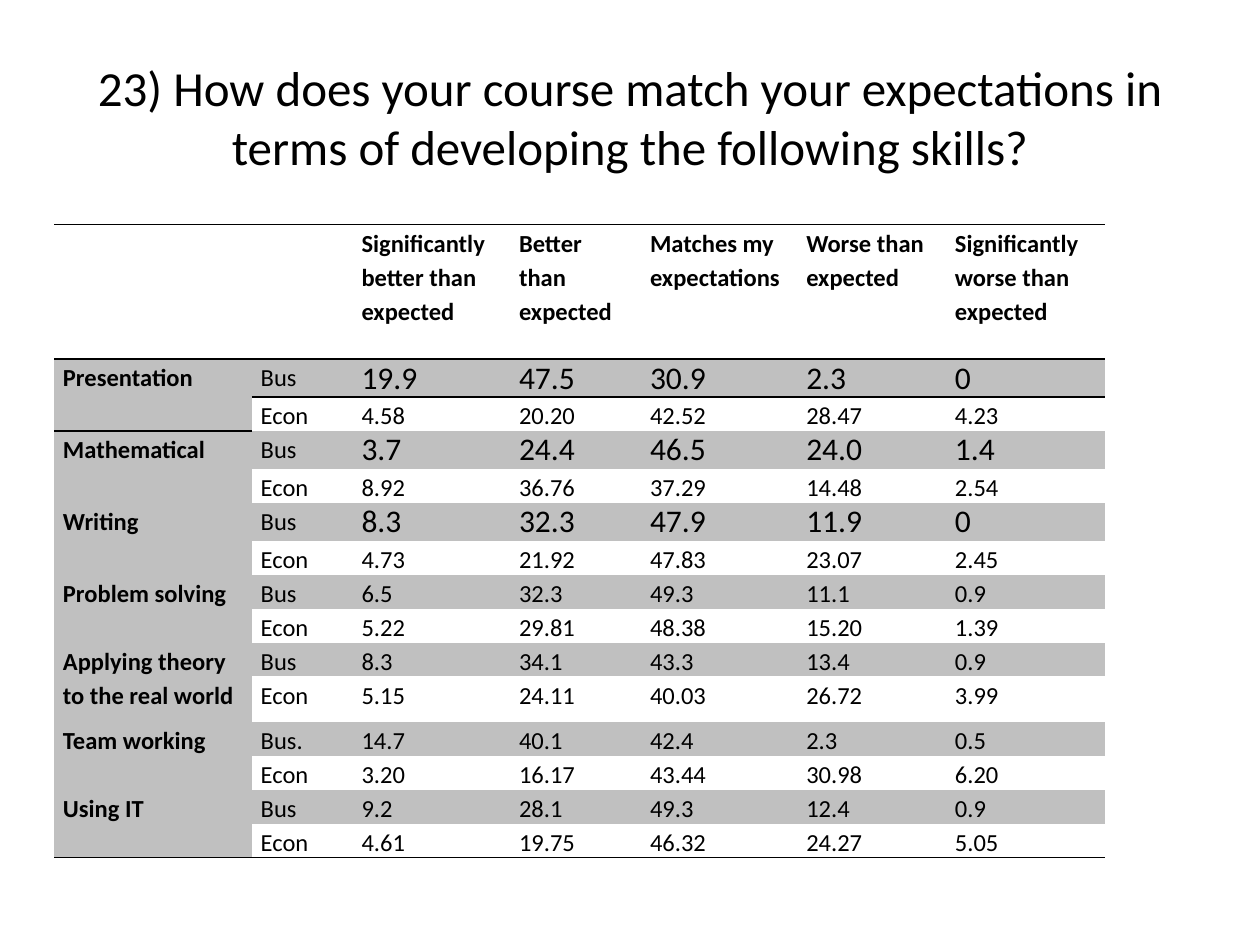
from dataclasses import dataclass

from lxml.etree import SubElement
from pptx import Presentation
from pptx.dml.color import RGBColor
from pptx.enum.text import MSO_ANCHOR, PP_ALIGN
from pptx.oxml.ns import qn
from pptx.util import Inches, Pt


@dataclass(frozen=True)
class Theme:
    font: str = "Calibri"
    ink: str = "000000"
    band: str = "C0C0C0"
    title: int = 28
    large: int = 18
    body: int = 14
    spacing: float = 1.15
    rule: int = 1
    plain_style: str = "{2D5ABB26-0587-4C30-8999-92F81FD0307C}"


THEME = Theme()
WIDTH, HEIGHT = 10, 7.5
COLUMNS = [1.57, 0.8, 1.25, 1.04, 1.24, 1.18, 1.26]
HEADER_HEIGHT, ROW_HEIGHT, TALL_HEIGHT = 1.07, 0.27, 0.36
TITLE = "23) How does your course match your expectations in terms of developing the following skills?"
HEADINGS = ["", "", "Significantly better than expected", "Better than expected",
            "Matches my expectations", "Worse than expected", "Significantly worse than expected"]
LARGE_SKILLS = {"Presentation", "Mathematical", "Writing"}
TALL_SKILL = "Applying theory to the real world"
SKILLS = [
    ("Presentation", "Bus", "19.9 47.5 30.9 2.3 0", "4.58 20.20 42.52 28.47 4.23"),
    ("Mathematical", "Bus", "3.7 24.4 46.5 24.0 1.4", "8.92 36.76 37.29 14.48 2.54"),
    ("Writing", "Bus", "8.3 32.3 47.9 11.9 0", "4.73 21.92 47.83 23.07 2.45"),
    ("Problem solving", "Bus", "6.5 32.3 49.3 11.1 0.9", "5.22 29.81 48.38 15.20 1.39"),
    (TALL_SKILL, "Bus", "8.3 34.1 43.3 13.4 0.9", "5.15 24.11 40.03 26.72 3.99"),
    ("Team working", "Bus.", "14.7 40.1 42.4 2.3 0.5", "3.20 16.17 43.44 30.98 6.20"),
    ("Using IT", "Bus", "9.2 28.1 49.3 12.4 0.9", "4.61 19.75 46.32 24.27 5.05"),
]


def add_span(para, text, size, bold=False):
    span = para.add_run()
    span.text = text
    span.font.name = THEME.font
    span.font.size = Pt(size)
    span.font.bold = bold
    span.font.color.rgb = RGBColor.from_string(THEME.ink)


def add_title(page):
    box = page.shapes.add_textbox(Inches(WIDTH * 0.05), Inches(HEIGHT * 0.04),
                                  Inches(WIDTH * 0.9), Inches(HEIGHT / 6))
    frame = box.text_frame
    frame.word_wrap = True
    frame.vertical_anchor = MSO_ANCHOR.MIDDLE
    para = frame.paragraphs[0]
    para.alignment = PP_ALIGN.CENTER
    add_span(para, TITLE, THEME.title)


def add_rule(cell, edge):
    properties = cell._tc.get_or_add_tcPr()
    line = SubElement(properties, qn(f"a:{edge}"), w=str(Pt(THEME.rule)))
    fill = SubElement(line, qn("a:solidFill"))
    SubElement(fill, qn("a:srgbClr"), val=THEME.ink)


def fill_cell(cell, text, size=THEME.body, bold=False, banded=False, edges=()):
    cell.margin_left = cell.margin_right = Inches(0.07)
    cell.margin_top = cell.margin_bottom = 0
    for edge in edges:
        add_rule(cell, edge)
    if banded:
        cell.fill.solid()
        cell.fill.fore_color.rgb = RGBColor.from_string(THEME.band)
    else:
        cell.fill.background()
    para = cell.text_frame.paragraphs[0]
    if text:
        if size == THEME.body:
            para.line_spacing = THEME.spacing
        add_span(para, text, size, bold)
    else:
        SubElement(para._p, qn("a:endParaRPr"), sz=str(size * 100))


def add_plain_table(page, heights):
    frame = page.shapes.add_table(len(heights), len(COLUMNS), Inches(0.43), Inches(1.78),
                                  Inches(sum(COLUMNS)), Inches(sum(heights)))
    table = frame.table
    table.first_row = table.horz_banding = False
    table._tbl.tblPr.find(qn("a:tableStyleId")).text = THEME.plain_style
    for column, width in zip(table.columns, COLUMNS):
        column.width = Inches(width)
    for row, height in zip(table.rows, heights):
        row.height = Inches(height)
    return table


def add_skills_table(page):
    heights = [HEADER_HEIGHT]
    for skill, *_ in SKILLS:
        heights += [ROW_HEIGHT, TALL_HEIGHT if skill == TALL_SKILL else ROW_HEIGHT]
    table = add_plain_table(page, heights)

    for column, heading in enumerate(HEADINGS):
        fill_cell(table.cell(0, column), heading, bold=True, edges=("lnT", "lnB"))

    last = len(heights) - 1
    for index, (skill, label, business, economics) in enumerate(SKILLS):
        top = 1 + 2 * index
        lines = [[skill, label, *business.split()], ["", "Econ", *economics.split()]]
        for row, texts in enumerate(lines, top):
            edges = ("lnT",) if row == 1 else ("lnB",) if row == last else ()
            for column, text in enumerate(texts):
                large = row == top and column > 1 and skill in LARGE_SKILLS
                cell_edges = ("lnB",) if row == last - 1 and column == 0 else edges
                fill_cell(table.cell(row, column), text,
                          size=THEME.large if large else THEME.body, bold=column == 0,
                          banded=row == top or column == 0, edges=cell_edges)
        table.cell(top, 0).merge(table.cell(top + 1, 0))


def main():
    deck = Presentation()
    deck.slide_width, deck.slide_height = Inches(WIDTH), Inches(HEIGHT)
    page = deck.slides.add_slide(deck.slide_layouts[6])
    add_title(page)
    add_skills_table(page)
    deck.save("out.pptx")


if __name__ == "__main__":
    main()
